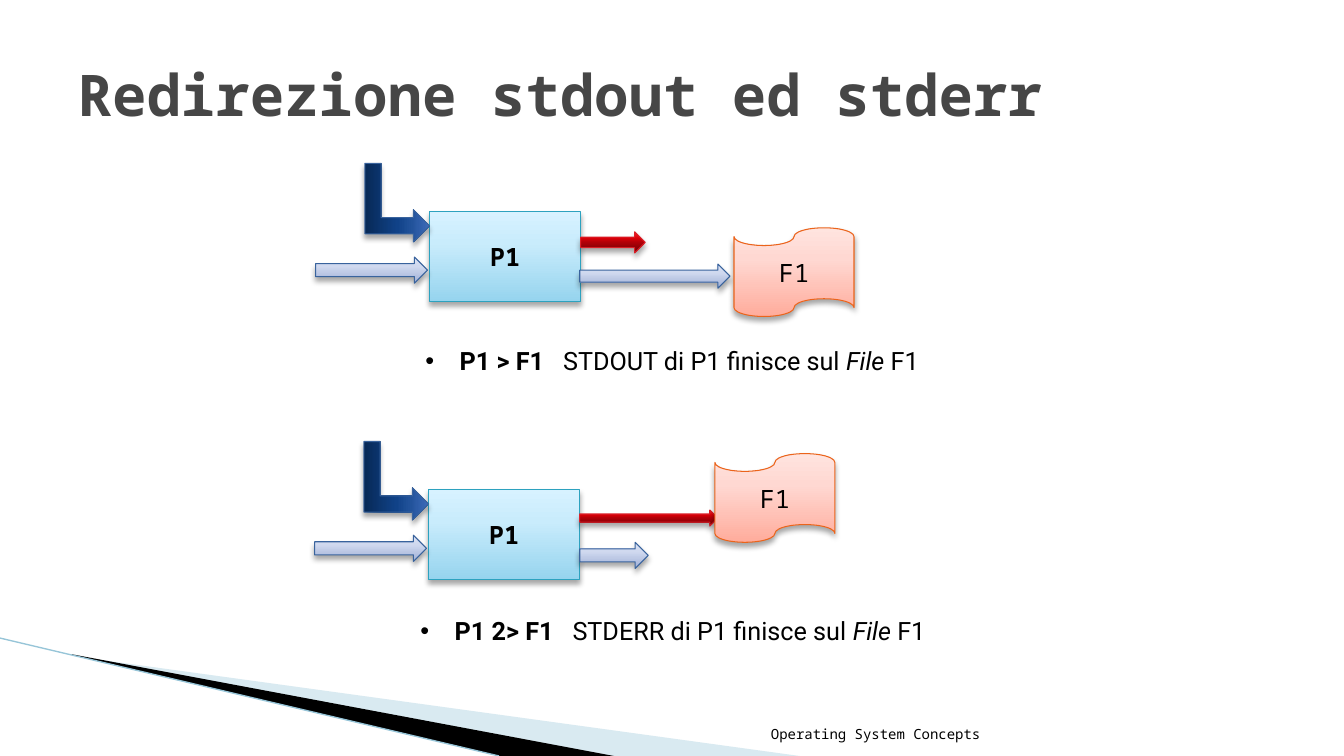
"""Build the slide on redirecting stdout and stderr to a file."""
from dataclasses import dataclass

import lxml.etree
import pptx
import pptx.dml.color
import pptx.enum.shapes
import pptx.enum.text
import pptx.oxml.ns
import pptx.shapes.autoshape
import pptx.slide
import pptx.text.text
import pptx.util

RGB = pptx.dml.color.RGBColor
SHAPE = pptx.enum.shapes.MSO_SHAPE
ALIGN = pptx.enum.text.PP_ALIGN
ANCHOR = pptx.enum.text.MSO_ANCHOR
AUTO_SIZE = pptx.enum.text.MSO_AUTO_SIZE
qn = pptx.oxml.ns.qn

PX = 9144
MONO = "Noto Sans Mono"
SANS = "Roboto"
BULLET_INDENT = 34

BLACK = RGB(0x00, 0x00, 0x00)
TITLE_GREY = RGB(0x46, 0x46, 0x46)
PALE_BLUE = RGB(0xA0, 0xCB, 0xDC)
EDGE_BLUE = RGB(0x97, 0xC5, 0xD8)


@dataclass(frozen=True)
class Style:
    stops: tuple[tuple[int, RGB], ...]
    line: RGB


PROCESS = Style(((0, RGB(0x96, 0xD4, 0xEE)), (65, RGB(0xC9, 0xEC, 0xFC)),
                 (100, RGB(0xD7, 0xF2, 0xFF))), RGB(0x2D, 0xA2, 0xBF))
NAVY = Style(((0, RGB(0x07, 0x29, 0x56)), (50, RGB(0x10, 0x42, 0x88)),
              (70, RGB(0x20, 0x51, 0x99)), (100, RGB(0x3D, 0x6B, 0xB9))),
             RGB(0x39, 0x63, 0x9D))
STANDARD = Style(((0, RGB(0x9F, 0xAF, 0xD6)), (65, RGB(0xD0, 0xD9, 0xEF)),
                  (100, RGB(0xDC, 0xE3, 0xF6))), RGB(0x39, 0x63, 0x9D))
ERROR = Style(((0, RGB(0x6D, 0x00, 0x05)), (50, RGB(0xB0, 0x00, 0x08)),
               (70, RGB(0xDA, 0x00, 0x08)), (100, RGB(0xFF, 0x24, 0x29))),
              RGB(0xDA, 0x1F, 0x28))
FILE = Style(((0, RGB(0xFF, 0xAC, 0x9C)), (65, RGB(0xFF, 0xD8, 0xD2)),
              (100, RGB(0xFF, 0xE4, 0xDF))), RGB(0xEB, 0x64, 0x1B))


@dataclass(frozen=True)
class Box:
    left: int
    top: int
    width: int
    height: int

    def emu(self) -> tuple[int, int, int, int]:
        return self.left * PX, self.top * PX, self.width * PX, self.height * PX


@dataclass(frozen=True)
class Diagram:
    left: int
    top: int
    stdout: Box
    stderr: Box
    file: Box
    caption: Box
    wrap: bool
    command: str
    stream: str


DIAGRAMS = (
    Diagram(426, 210, Box(575, 262, 149, 24), Box(576, 230, 64, 21),
            Box(728, 226, 119, 88), Box(412, 338, 530, 40), False,
            "P1 > F1", "STDOUT"),
    Diagram(425, 486, Box(575, 538, 68, 26), Box(575, 506, 137, 16),
            Box(709, 450, 119, 88), Box(407, 606, 699, 40), True,
            "P1 2> F1", "STDERR"),
)


def set_font(p: pptx.text.text._Paragraph, name: str, size: int,
             color: RGB = BLACK, bold: bool = False) -> None:
    p.font.name = name
    p.font.size = pptx.util.Pt(size)
    p.font.color.rgb = color
    p.font.bold = bold


def add_styled(s: pptx.slide.Slide, kind: SHAPE, box: Box, style: Style,
               text: str = "", bold: bool = False) -> pptx.shapes.autoshape.Shape:
    sp = s.shapes.add_shape(kind, *box.emu())
    sp.fill.gradient()
    sp.fill.gradient_angle = 90
    sp.line.color.rgb = style.line
    sp.line.width = pptx.util.Pt(0.75)
    sp.shadow.inherit = False
    props = sp._element.spPr
    stops = props.find(qn("a:gradFill")).find(qn("a:gsLst"))
    for old in list(stops):
        stops.remove(old)
    for position, color in style.stops:
        stop = lxml.etree.SubElement(stops, qn("a:gs"), pos=str(position * 1000))
        lxml.etree.SubElement(stop, qn("a:srgbClr"), val=str(color))
    shadow = lxml.etree.SubElement(
        props.find(qn("a:effectLst")), qn("a:outerShdw"), blurRad="50800",
        dist="38100", dir="5400000", rotWithShape="0")
    shade = lxml.etree.SubElement(shadow, qn("a:srgbClr"), val=str(BLACK))
    lxml.etree.SubElement(shade, qn("a:alpha"), val="35000")
    if text:
        tf = sp.text_frame
        tf.vertical_anchor = ANCHOR.MIDDLE
        p = tf.paragraphs[0]
        p.text = text
        p.alignment = ALIGN.CENTER
        set_font(p, MONO, 18, bold=bold)
    return sp


def add_caption(s: pptx.slide.Slide, d: Diagram) -> None:
    tf = s.shapes.add_textbox(*d.caption.emu()).text_frame
    tf.word_wrap = d.wrap
    tf.auto_size = AUTO_SIZE.SHAPE_TO_FIT_TEXT
    p = tf.paragraphs[0]
    props = p._p.get_or_add_pPr()
    props.set("marL", str(BULLET_INDENT * PX))
    props.set("indent", str(-BULLET_INDENT * PX))
    lxml.etree.SubElement(props, qn("a:buFont"), typeface="Arial")
    lxml.etree.SubElement(props, qn("a:buChar"), char="•")
    set_font(p, SANS, 18)
    command, gap, result, file_word, _ = [
        p.add_run() for _ in range(5)]
    command.text = d.command
    command.font.bold = True
    gap.text = " "
    gap.font._element.set("spc", "900")
    result.text = f"{d.stream} di P1 finisce sul "
    file_word.text = "File "
    file_word.font.italic = True
    p.runs[-1].text = "F1"


def add_diagram(s: pptx.slide.Slide, d: Diagram) -> None:
    add_styled(s, SHAPE.RECTANGLE, Box(d.left, d.top, 150, 89), PROCESS, "P1", True)
    bent = add_styled(s, SHAPE.BENT_UP_ARROW,
                      Box(d.left - 71, d.top - 41, 78, 64), NAVY)
    bent.rotation = 90
    stdin = Box(d.left - 113, d.top + 45, 111, 26)
    for box, style in ((stdin, STANDARD), (d.stdout, STANDARD), (d.stderr, ERROR)):
        add_styled(s, SHAPE.RIGHT_ARROW, box, style)
    add_caption(s, d)
    add_styled(s, SHAPE.FLOWCHART_PUNCHED_TAPE, d.file, FILE, "F1")


def add_wedge(s: pptx.slide.Slide, points: tuple[tuple[int, int], ...],
              color: RGB) -> pptx.shapes.autoshape.Shape:
    outline = s.shapes.build_freeform(*points[0], scale=PX)
    outline.add_line_segments(points[1:], close=True)
    sp = outline.convert_to_shape()
    sp.shadow.inherit = False
    sp.fill.solid()
    sp.fill.fore_color.rgb = color
    sp.line.fill.background()
    return sp


def add_corner(s: pptx.slide.Slide) -> None:
    pale = add_wedge(s, ((73, 651), (793, 750), (608, 750), (73, 650)), PALE_BLUE)
    tint = pale._element.spPr.find(qn("a:solidFill"))[0]
    lxml.etree.SubElement(tint, qn("a:alpha"), val="40000")
    add_wedge(s, ((71, 649), (609, 750), (496, 750), (72, 650)), BLACK)
    edge = s.shapes.add_connector(pptx.enum.shapes.MSO_CONNECTOR.STRAIGHT,
                                  0, 633 * PX, 495 * PX, 750 * PX)
    edge.line.color.rgb = EDGE_BLUE
    edge.line.width = pptx.util.Pt(0.95)
    lxml.etree.SubElement(edge._element.spPr, qn("a:effectLst"))


def add_title(s: pptx.slide.Slide) -> None:
    sp = s.shapes.title
    sp.left, sp.top, sp.width, sp.height = Box(67, 30, 1200, 125).emu()
    tf = sp.text_frame
    tf.word_wrap = True
    tf.auto_size = AUTO_SIZE.NONE
    tf.vertical_anchor = ANCHOR.MIDDLE
    p = tf.paragraphs[0]
    p.text = "Redirezione stdout ed stderr"
    p.alignment = ALIGN.LEFT
    set_font(p, MONO, 41, TITLE_GREY, True)


def add_footer(s: pptx.slide.Slide) -> None:
    tf = s.shapes.add_textbox(*Box(639, 701, 343, 40).emu()).text_frame
    tf.word_wrap = True
    tf.vertical_anchor = ANCHOR.BOTTOM
    p = tf.paragraphs[0]
    p.text = "Operating System Concepts"
    p.alignment = ALIGN.RIGHT
    set_font(p, MONO, 10)


def main() -> None:
    prs = pptx.Presentation()
    prs.slide_width, prs.slide_height = 1333 * PX, 750 * PX
    s = prs.slides.add_slide(prs.slide_layouts[5])
    add_corner(s)
    add_title(s)
    add_footer(s)
    for d in DIAGRAMS:
        add_diagram(s, d)
    prs.save("out.pptx")


if __name__ == "__main__":
    main()
